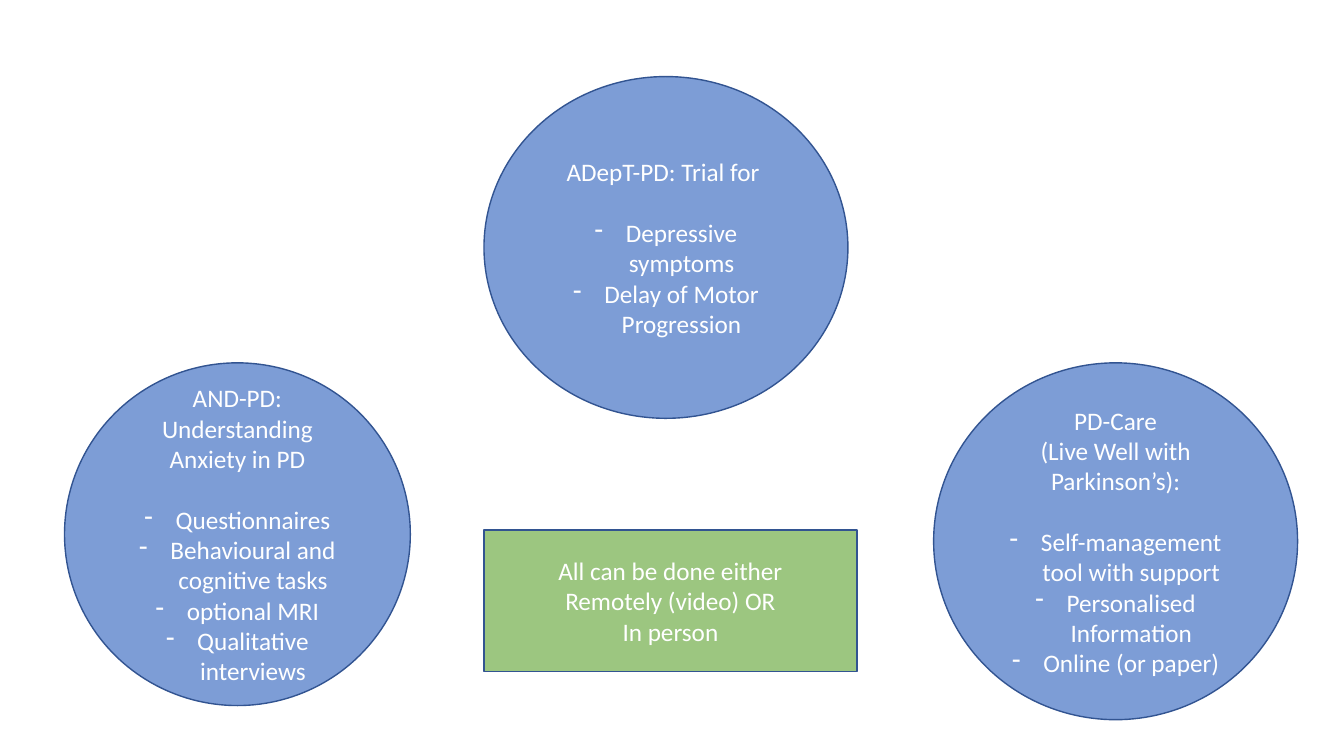
import pptx
import pptx.util
import pptx.dml.color
import pptx.enum.shapes
import pptx.enum.text
import pptx.oxml
import pptx.oxml.ns
import lxml.etree

Inches = pptx.util.Inches
Pt = pptx.util.Pt
RGBColor = pptx.dml.color.RGBColor
Kind = pptx.enum.shapes.MSO_SHAPE
qn = pptx.oxml.ns.qn

BLUE = RGBColor(0x44, 0x72, 0xC4)
GREEN = RGBColor(0x70, 0xAD, 0x47)
EDGE = RGBColor(0x32, 0x54, 0x91)
WHITE = RGBColor(0xFF, 0xFF, 0xFF)

FONT = {"name": "Calibri", "size": Pt(18)}
FRAME = {"word_wrap": True, "vertical_anchor": pptx.enum.text.MSO_ANCHOR.MIDDLE}
GAP = Pt(22)  # one line between heading and list
HANG = Inches(0.31)
ALPHA = "69000"

# Box, heading lines, list items
STUDIES = [
    ((4.8, 0.76, 3.61, 3.39), ["ADepT-PD: Trial for "],
     ["Depressive symptoms", "Delay of Motor Progression"]),
    ((0.64, 3.6, 3.43, 3.4), ["AND-PD:", "Understanding Anxiety in PD"],
     ["Questionnaires", "Behavioural and cognitive tasks", "optional MRI",
      "Qualitative interviews"]),
    ((9.26, 3.6, 3.61, 3.54), ["PD-Care", "(Live Well with Parkinson’s):"],
     ["Self-management tool with support", "Personalised Information",
      "Online (or paper)"]),
]
MODES = ["All can be done either", "Remotely (video) OR", "In person"]


def style(item, form):
    for key, value in form.items():
        setattr(item, key, value)


def add_dash(para):
    props = para._p.get_or_add_pPr()
    props.set("marL", str(HANG))
    props.set("indent", str(-HANG))
    lxml.etree.SubElement(props, qn("a:buFontTx"))
    lxml.etree.SubElement(props, qn("a:buChar")).set("char", "-")


def add_panel(slide, kind, box, color, heads, items=()):
    """Place a tinted shape in its box, with heading lines and a dashed list."""
    shape = slide.shapes.add_shape(kind, *map(Inches, box))
    shape.shadow.inherit = False
    shape.fill.solid()
    shape.fill.fore_color.rgb = color
    tint = shape.element.spPr.find(qn("a:solidFill")).find(qn("a:srgbClr"))
    lxml.etree.SubElement(tint, qn("a:alpha")).set("val", ALPHA)
    shape.line.color.rgb = EDGE
    shape.line.width = Pt(1)

    # Text
    frame = shape.text_frame
    style(frame, FRAME)
    lines = [*heads, *items]
    for i, line in enumerate(lines):
        para = frame.add_paragraph() if i else frame.paragraphs[0]
        para.alignment = pptx.enum.text.PP_ALIGN.CENTER
        if i == len(heads):
            para.space_before = GAP
        if i >= len(heads):
            add_dash(para)
        run = para.add_run()
        run.text = line
        style(run.font, FONT)
        run.font.color.rgb = WHITE


def main():
    deck = pptx.Presentation()
    style(deck, {"slide_width": Inches(13.33), "slide_height": Inches(7.5)})
    slide = deck.slides.add_slide(deck.slide_layouts[6])

    # Study circles
    for box, heads, items in STUDIES:
        add_panel(slide, Kind.OVAL, box, BLUE, heads, items)

    # Ways to take part
    add_panel(slide, Kind.RECTANGLE, (4.8, 5.26, 3.7, 1.4), GREEN, MODES)

    deck.save("out.pptx")


if __name__ == "__main__":
    main()
